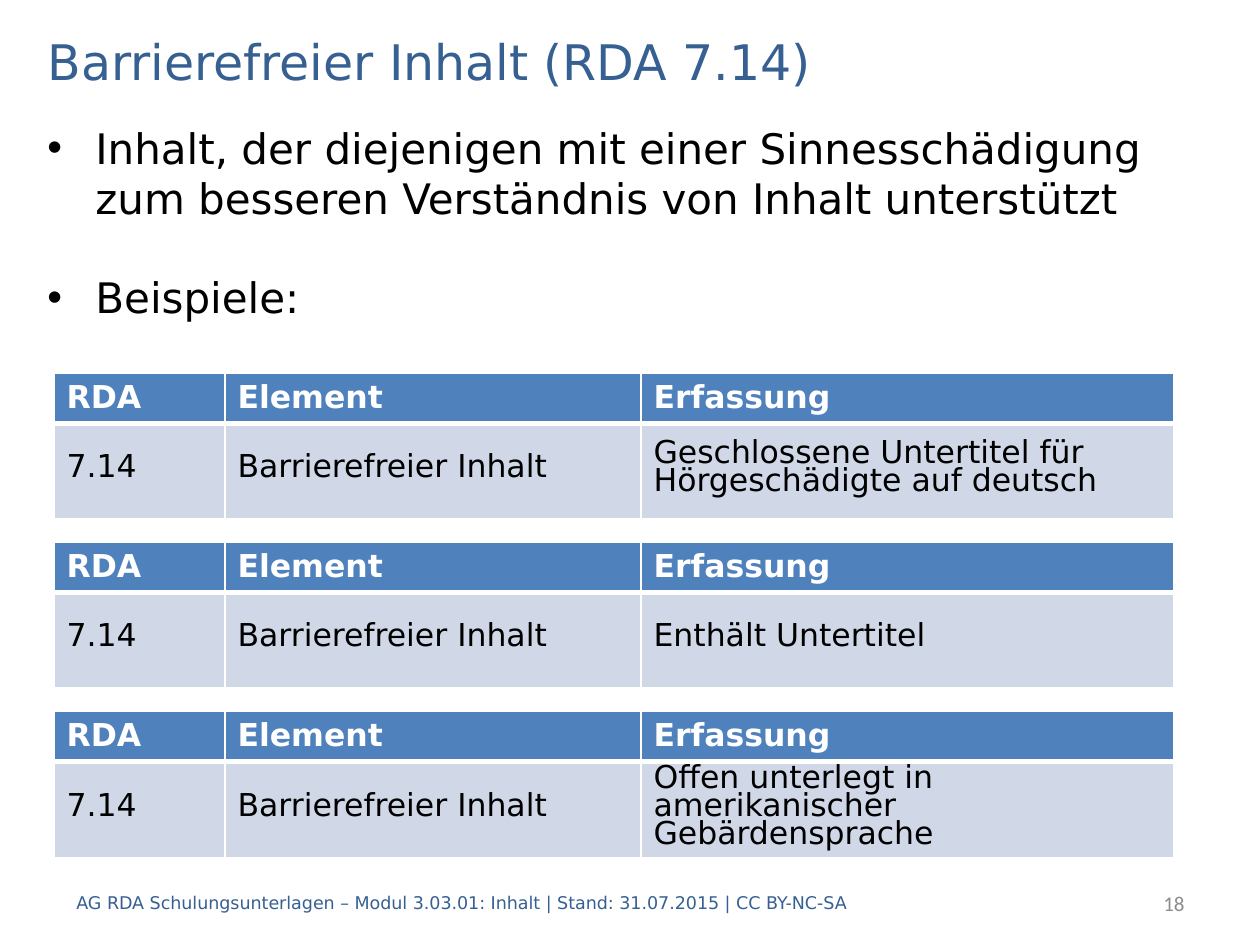
from lxml.etree import SubElement
from pptx import Presentation
from pptx.dml.color import RGBColor
from pptx.enum.text import MSO_ANCHOR, MSO_AUTO_SIZE, PP_ALIGN
from pptx.oxml.ns import qn
from pptx.util import Emu, Pt

PX = 914400 / 126
WHITE = RGBColor(0xFF, 0xFF, 0xFF)
BLACK = RGBColor(0, 0, 0)
NAVY = RGBColor(0x37, 0x60, 0x92)
BLUE = RGBColor(0x4F, 0x81, 0xBD)
PALE = RGBColor(0xD0, 0xD8, 0xE8)
GRAY = RGBColor(0x8C, 0x8C, 0x8C)


def px(*values):
    return [Emu(round(v * PX)) for v in values]


def write(tf, text, size, color, font="DejaVu Sans", bold=False,
          align=PP_ALIGN.LEFT, new=False):
    p = tf.add_paragraph() if new else tf.paragraphs[0]
    p.alignment = align
    r = p.add_run()
    r.text = text
    r.font.size = Pt(size)
    r.font.name = font
    r.font.bold = bold
    r.font.color.rgb = color
    return p


prs = Presentation()
prs.slide_width, prs.slide_height = px(1260, 945)
s = prs.slides.add_slide(prs.slide_layouts[5])

title = s.shapes.title
title.left, title.top, title.width, title.height = px(35, 25, 1191, 71)
tf = title.text_frame
tf.auto_size = MSO_AUTO_SIZE.NONE
tf.vertical_anchor = MSO_ANCHOR.MIDDLE
write(tf, "Barrierefreier Inhalt (RDA 7.14)", 28, NAVY)

tf = s.shapes.add_textbox(*px(35, 116, 1137, 217)).text_frame
tf.word_wrap = True
bullets = [
    "Inhalt, der diejenigen mit einer Sinnesschädigung zum besseren Verständnis von Inhalt unterstützt",
    "Beispiele:",
]
for i, text in enumerate(bullets):
    p = write(tf, text, 24, BLACK, new=i > 0)
    p.space_before = Pt(28 * i)
    pPr = p._p.get_or_add_pPr()
    indent = px(48)[0]
    pPr.set("marL", str(indent))
    pPr.set("indent", str(-indent))
    SubElement(pPr, qn("a:buFont"), typeface="Arial")
    SubElement(pPr, qn("a:buChar"), char="•")

entries = [
    "Geschlossene Untertitel für Hörgeschädigte auf deutsch",
    "Enthält Untertitel",
    "Offen unterlegt in amerikanischer Gebärdensprache",
]
for i, entry in enumerate(entries):
    table = s.shapes.add_table(2, 3, *px(54, 373 + 169 * i, 1120, 145)).table
    for col, width in zip(table.columns, px(171, 416, 533)):
        col.width = width
    for row, height in zip(table.rows, px(50, 95)):
        row.height = height
    rows = [("RDA", "Element", "Erfassung"),
            ("7.14", "Barrierefreier Inhalt", entry)]
    for j, texts in enumerate(rows):
        header = j == 0
        for k, text in enumerate(texts):
            cell = table.cell(j, k)
            p = write(cell.text_frame, text, 18, WHITE if header else BLACK, bold=header)
            if not header:
                cell.vertical_anchor = MSO_ANCHOR.MIDDLE
                p.line_spacing = Pt(16)
                p.space_before = p.space_after = Pt(6)
            tcPr = cell._tc.get_or_add_tcPr()
            for side in ("lnL", "lnR", "lnT", "lnB"):
                thick = side == ("lnB" if header else "lnT")
                ln = SubElement(tcPr, qn(f"a:{side}"), w=str(Pt(3 if thick else 1)))
                SubElement(SubElement(ln, qn("a:solidFill")), qn("a:srgbClr"), val=str(WHITE))
            cell.fill.solid()
            cell.fill.fore_color.rgb = BLUE if header else PALE

footers = [
    (64, 843, "AG RDA Schulungsunterlagen – Modul 3.03.01: Inhalt | Stand: 31.07.2015 | CC BY-NC-SA",
     10, NAVY, "DejaVu Sans", PP_ALIGN.LEFT),
    (997, 200, "18", 12, GRAY, "Calibri", PP_ALIGN.RIGHT),
]
for left, width, text, size, color, font, align in footers:
    tf = s.shapes.add_textbox(*px(left, 878, width, 50)).text_frame
    tf.word_wrap = True
    tf.vertical_anchor = MSO_ANCHOR.MIDDLE
    write(tf, text, size, color, font=font, align=align)

prs.save("out.pptx")
